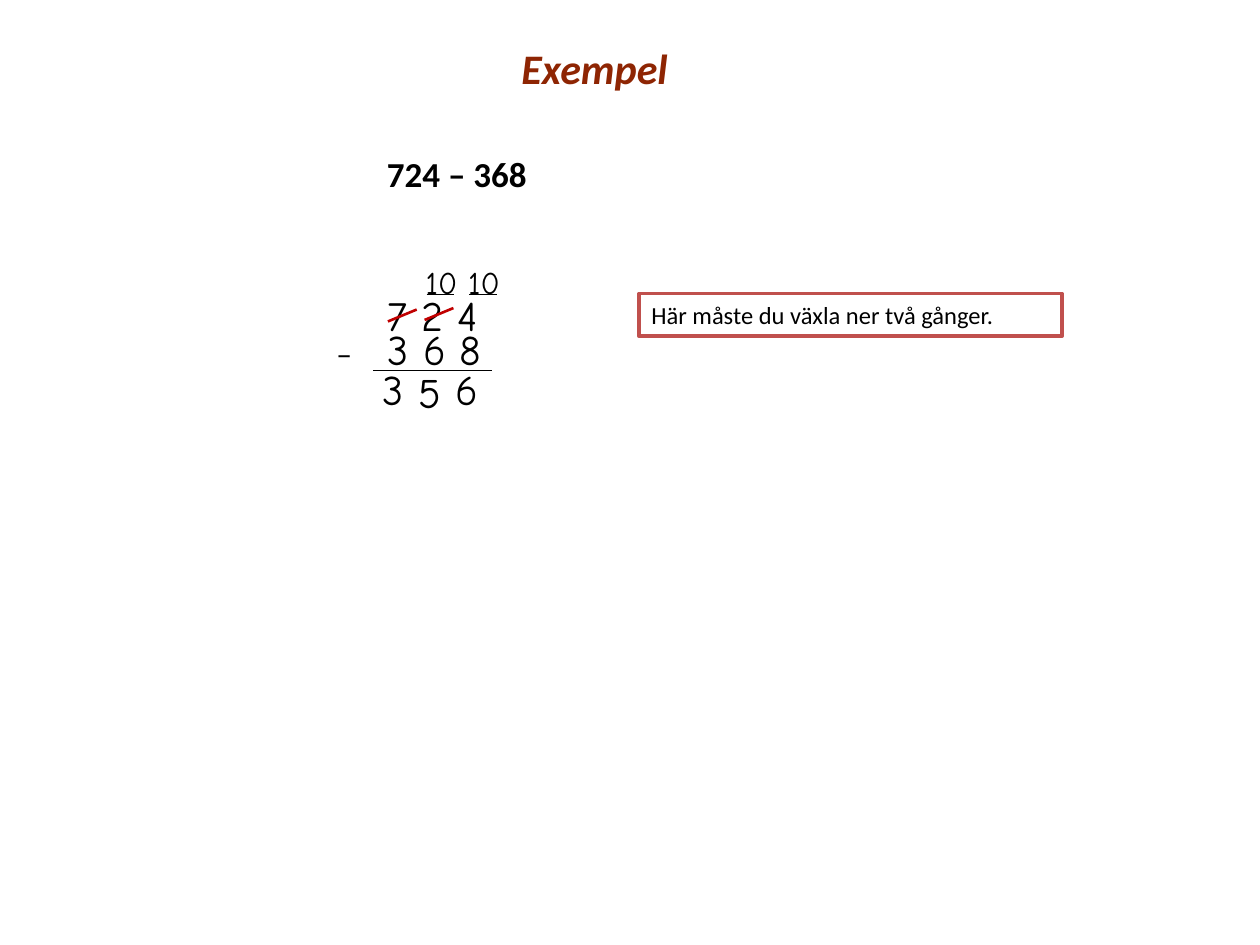
from dataclasses import dataclass

from lxml.etree import SubElement
from pptx import Presentation
from pptx.dml.color import RGBColor
from pptx.enum.shapes import MSO_CONNECTOR, MSO_SHAPE
from pptx.enum.text import MSO_ANCHOR, PP_ALIGN
from pptx.oxml.ns import qn
from pptx.util import Cm, Pt

BLACK, WHITE, BROWN = "000000", "FFFFFF", "8E2503"
STRIKE_RED, FRAME_RED = "C00000", "C0504D"
PRINT, HAND = "Calibri", "Comic Neue"


@dataclass(frozen=True)
class Area:
    """Left, top, width and height in centimetres."""
    left: float
    top: float
    width: float
    height: float = 1.27

    def lengths(self) -> tuple:
        return Cm(self.left), Cm(self.top), Cm(self.width), Cm(self.height)


@dataclass(frozen=True)
class Digit:
    text: str
    left: float
    top: float


def color(value: str) -> RGBColor:
    return RGBColor.from_string(value)


def add_span(para, text: str, *, size: float = 24, font: str = HAND,
             ink: str = BLACK, bold: bool = False, italic: bool = False) -> None:
    span = para.add_run()
    span.text = text
    span.font.name = font
    span.font.size = Pt(size)
    span.font.bold = bold
    span.font.italic = italic
    span.font.color.rgb = color(ink)


def add_text(shapes, area: Area, text: str = "", *, wrap: bool = True, **style):
    """Add a text box and return its paragraph."""
    box = shapes.add_textbox(*area.lengths())
    box.text_frame.word_wrap = wrap
    para = box.text_frame.paragraphs[0]
    if text:
        add_span(para, text, **style)
    return para


def add_line(shapes, start: tuple[float, float], end: tuple[float, float], *,
             width: float, ink: str = BLACK) -> None:
    line = shapes.add_connector(MSO_CONNECTOR.STRAIGHT,
                                *(Cm(value) for value in start + end))
    line.line.width = Pt(width)
    line.line.color.rgb = color(ink)
    SubElement(line._element.spPr, qn("a:effectLst"))


def add_task(shapes, area: Area, text: str) -> None:
    """Add the task as a one-cell table without fill."""
    table = shapes.add_table(1, 1, *area.lengths()).table
    table.first_row = table.horz_banding = False
    cell = table.cell(0, 0)
    cell.fill.background()
    cell.margin_left = cell.margin_right = Cm(0.13)
    cell.margin_top = cell.margin_bottom = 0
    add_span(cell.text_frame.paragraphs[0], text, size=20, font=PRINT, bold=True)


def add_note(shapes, area: Area, text: str) -> None:
    box = shapes.add_shape(MSO_SHAPE.RECTANGLE, *area.lengths())
    box.shadow.inherit = False
    box.fill.solid()
    box.fill.fore_color.rgb = color(WHITE)
    box.line.color.rgb = color(FRAME_RED)
    box.line.width = Pt(2)
    frame = box.text_frame
    frame.word_wrap = True
    frame.vertical_anchor = MSO_ANCHOR.TOP
    frame.paragraphs[0].alignment = PP_ALIGN.LEFT
    add_span(frame.paragraphs[0], text, size=14, font=PRINT)


def add_subtrahend(shapes, area: Area, sign: str, digits: str) -> None:
    """Add the minus sign and, at a tab stop, the digits."""
    para = add_text(shapes, area)
    stops = SubElement(para._p.get_or_add_pPr(), qn("a:tabLst"))
    SubElement(stops, qn("a:tab"), pos=str(Cm(1.04)), algn="l")
    add_span(para, sign + "\t", size=18, font=PRINT)
    add_span(para, digits)


def add_carry(shapes, left: float) -> None:
    """Add an underlined ten above a column."""
    group = shapes.add_group_shape().shapes
    add_line(group, (left + 0.27, 5.94), (left + 0.83, 5.94), width=0.75)
    add_text(group, Area(left, 5.18, 1.5, 1.02), "10", size=18)


def main() -> None:
    deck = Presentation()
    deck.slide_width, deck.slide_height = Cm(25.4), Cm(19.05)
    page = deck.slides.add_slide(deck.slide_layouts[6])
    shapes = page.shapes

    add_text(shapes, Area(10.26, 0.74, 3.48), "Exempel", wrap=False,
             font=PRINT, ink=BROWN, bold=True, italic=True)
    add_task(shapes, Area(7.67, 3.1, 4.01, 0.84), "724 – 368")
    add_text(shapes, Area(7.57, 5.72, 2.9), "7 2 4")
    add_note(shapes, Area(12.88, 5.92, 8.53, 0.86),
             "Här måste du växla ner två gånger.")
    add_subtrahend(shapes, Area(6.53, 6.4, 4.6), "–", "3 6 8")
    add_line(shapes, (7.52, 7.47), (9.91, 7.47), width=1)

    for left in (9.19, 8.33):
        add_carry(shapes, left)
    for left, bottom in ((8.56, 6.45), (7.82, 6.48)):
        add_line(shapes, (left, bottom), (left + 0.58, bottom - 0.24),
                 width=1.5, ink=STRIKE_RED)
    for digit in (Digit("3", 7.47, 7.21), Digit("5", 8.18, 7.26),
                  Digit("6", 8.94, 7.21)):
        add_text(shapes, Area(digit.left, digit.top, 0.74), digit.text)

    deck.save("out.pptx")


if __name__ == "__main__":
    main()
